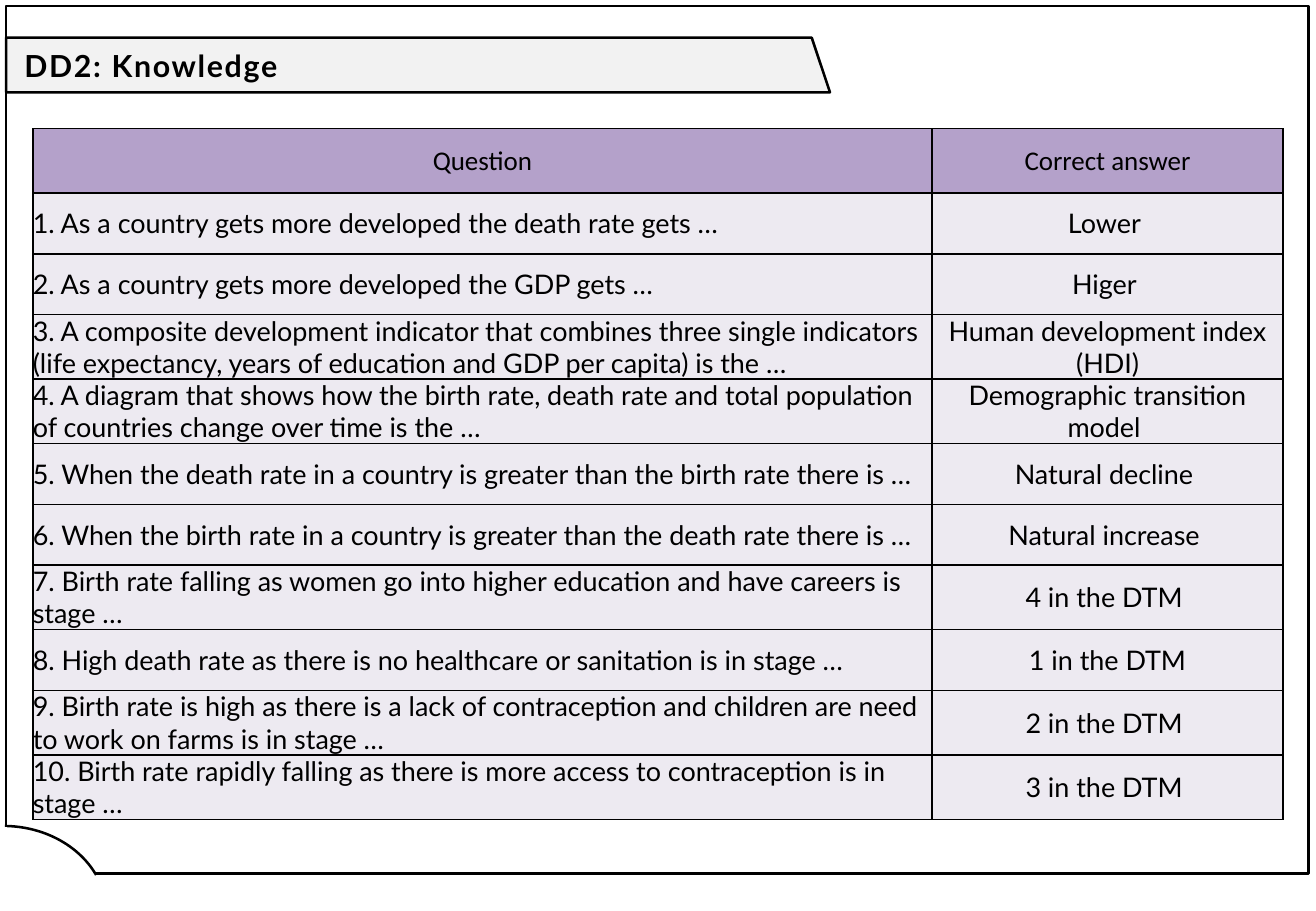
from dataclasses import dataclass

from lxml import etree
from pptx import Presentation
from pptx import util as u
from pptx.dml.color import RGBColor
from pptx.enum import shapes, text
from pptx.oxml import ns


@dataclass(frozen=True)
class Theme:
    ink: str = "000000"
    paper: str = "FFFFFF"
    band: str = "F2F2F2"
    head: str = "B4A1CA"
    cell: str = "EDEAF1"
    main: str = "Lato"
    alt: str = "Calibri"
    big: int = 18
    size: int = 16
    line: float = 1.5
    edge: float = 1


THEME = Theme()
HEAD = ("Question", "Correct answer")
ROWS = [
    ("1. As a country gets more developed the death rate gets …", "Lower "),
    ("2. As a country gets more developed the GDP gets …", "Higer "),
    ("3. A composite development indicator that combines three single indicators "
     "(life expectancy, years of education and GDP per capita) is the …",
     "Human development index (HDI)"),
    ("4. A diagram that shows how the birth rate, death rate and total population "
     "of countries change over time is the …", "Demographic transition model "),
    ("5. When the death rate in a country is greater than the birth rate there is …",
     "Natural decline "),
    ("6. When the birth rate in a country is greater than the death rate there is …",
     "Natural increase "),
    ("7. Birth rate falling as women go into higher education and have careers is stage …",
     "4 in the DTM "),
    ("8. High death rate as there is no healthcare or sanitation is in stage …",
     "1 in the DTM"),
    ("9. Birth rate is high as there is a lack of contraception and children are need "
     "to work on farms is in stage …", "2 in the DTM "),
    ("10. Birth rate rapidly falling as there is more access to contraception is in stage …",
     "3 in the DTM "),
]


def color(code):
    return RGBColor.from_string(code)


def paint(shape, fill=None, line=True):
    shape.shadow.inherit = False
    if fill:
        shape.fill.solid()
        shape.fill.fore_color.rgb = color(fill)
    else:
        shape.fill.background()
    if line:
        shape.line.color.rgb = color(THEME.ink)
        shape.line.width = u.Pt(THEME.line)
    else:
        shape.line.fill.background()


def style(run, face, size, bold=False):
    run.font.name = face
    run.font.size = u.Pt(size)
    run.font.bold = bold
    run.font.color.rgb = color(THEME.ink)


def add_shape(slide, kind, x, y, w, h):
    return slide.shapes.add_shape(kind, *map(u.Inches, (x, y, w, h)))


def add_band(slide, x, y, w, h):
    slant = 0.15
    points = [(x + w - slant, y), (x + w, y + h), (x, y + h)]
    pen = slide.shapes.build_freeform(u.Inches(x), u.Inches(y))
    pen.add_line_segments([(u.Inches(a), u.Inches(b)) for a, b in points], close=True)
    paint(pen.convert_to_shape(), THEME.band)


def add_frame(slide, x, y, w, h):
    paint(add_shape(slide, shapes.MSO_SHAPE.RECTANGLE, x, y, w, h))
    curve = add_shape(slide, shapes.MSO_SHAPE.ARC, x - 0.87, y + h - 0.39, 1.7, 1.45)
    curve.adjustments[0] = 162.53
    curve.adjustments[1] = 202.27
    paint(curve, THEME.paper)
    patch = add_shape(slide, shapes.MSO_SHAPE.RECTANGLE, x - 0.04, y + h - 0.38, 0.05, 0.1)
    paint(patch, THEME.paper, line=False)


def add_title(slide, label, x, y, w, h):
    title = slide.shapes.title
    title.left, title.top, title.width, title.height = map(u.Inches, (x, y, w, h))
    slide.shapes._spTree.append(title._element)
    frame = title.text_frame
    frame.text = label
    frame.word_wrap = True
    frame.auto_size = text.MSO_AUTO_SIZE.NONE
    frame.vertical_anchor = text.MSO_ANCHOR.MIDDLE
    para = frame.paragraphs[0]
    para.alignment = text.PP_ALIGN.LEFT
    para.line_spacing = 1.07
    para.space_after = u.Pt(8)
    run = para.runs[0]
    style(run, THEME.main, THEME.big, bold=True)
    run.font._element.set("spc", "100")


def add_edges(cell):
    props = cell._tc.get_or_add_tcPr()
    for side in ("lnL", "lnR", "lnT", "lnB"):
        edge = etree.SubElement(props, ns.qn("a:" + side), w=str(u.Pt(THEME.edge)))
        fill = etree.SubElement(edge, ns.qn("a:solidFill"))
        etree.SubElement(fill, ns.qn("a:srgbClr"), val=THEME.ink)


def fill_cell(cell, label, face, fill, align):
    cell.text_frame.text = label
    cell.margin_left = cell.margin_right = cell.margin_top = cell.margin_bottom = 0
    cell.vertical_anchor = text.MSO_ANCHOR.MIDDLE
    para = cell.text_frame.paragraphs[0]
    para.alignment = align
    style(para.runs[0], face, THEME.size)
    add_edges(cell)
    cell.fill.solid()
    cell.fill.fore_color.rgb = color(fill)


def add_quiz(slide, x, y, w, h):
    left, mid = text.PP_ALIGN.LEFT, text.PP_ALIGN.CENTER
    top, side = 0.53, 2.89
    count = len(ROWS)
    box = map(u.Inches, (x, y, w, h))
    table = slide.shapes.add_table(count + 1, 2, *box).table
    for col, width in zip(table.columns, (w - side, side)):
        col.width = u.Inches(width)
    for row, height in zip(table.rows, [top] + [(h - top) / count] * count):
        row.height = u.Inches(height)
    for i, row in enumerate([HEAD] + ROWS):
        face, fill = (THEME.main, THEME.cell) if i else (THEME.alt, THEME.head)
        for j, label in enumerate(row):
            align = left if i and j == 0 else mid
            fill_cell(table.cell(i, j), label, face, fill, align)


def main():
    deck = Presentation()
    deck.slide_width, deck.slide_height = u.Inches(10.83), u.Inches(7.5)
    slide = deck.slides.add_slide(deck.slide_layouts[5])
    add_band(slide, 0.05, 0.31, 6.78, 0.45)
    add_frame(slide, 0.05, 0.05, 10.72, 7.14)
    add_quiz(slide, 0.27, 1.06, 10.29, 5.53)
    add_title(slide, "DD2: Knowledge", 0.1, 0.21, 6.43, 0.63)
    deck.save("out.pptx")


if __name__ == "__main__":
    main()
